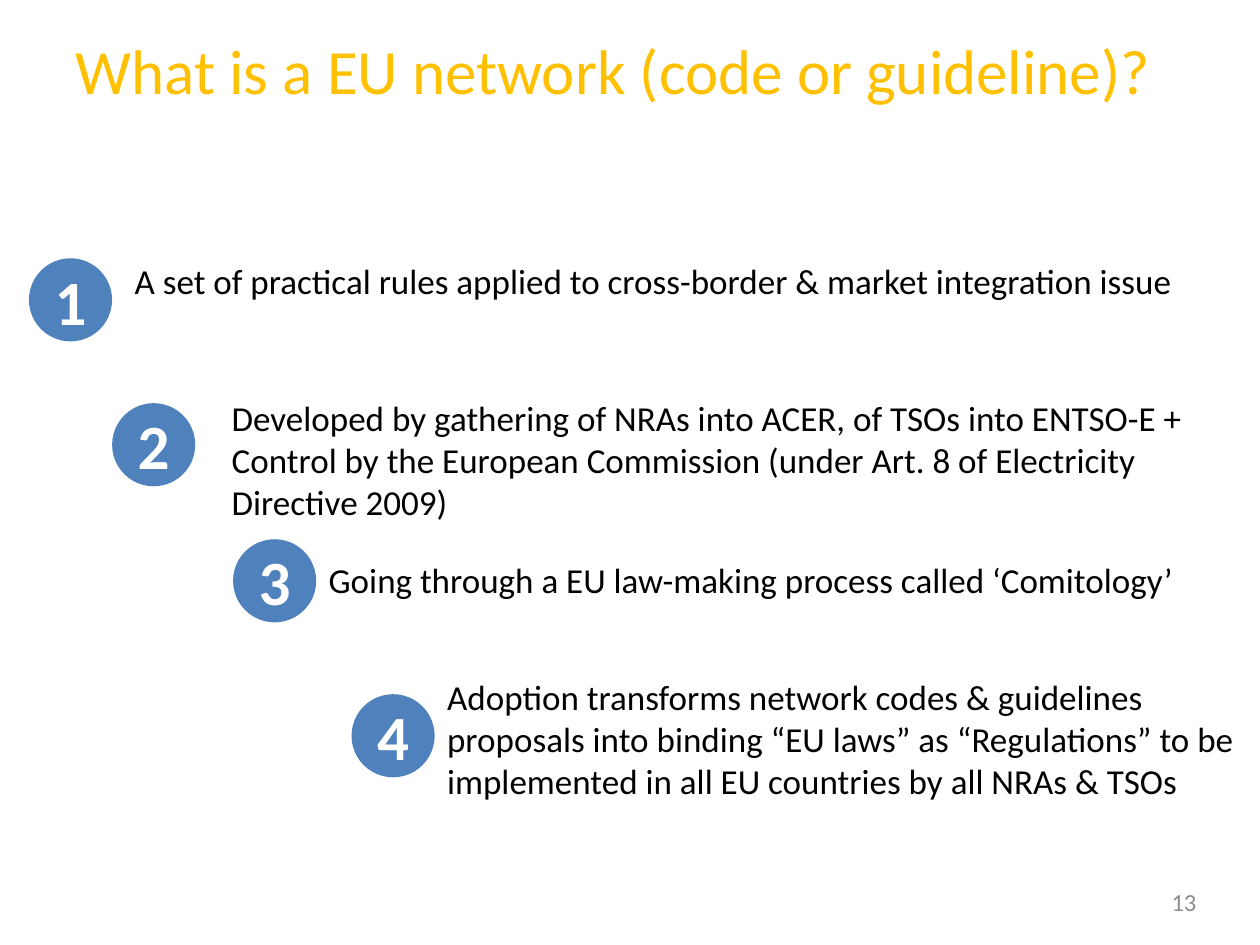
from typing import NamedTuple

from pptx import Presentation
from pptx.dml.color import RGBColor
from pptx.enum import shapes, text
from pptx.util import Inches, Pt

FONT = "Calibri"
GOLD = RGBColor(0xFF, 0xC0, 0x00)
BLUE = RGBColor(0x4F, 0x81, 0xBD)
WHITE = RGBColor(0xFF, 0xFF, 0xFF)
BLACK = RGBColor(0x00, 0x00, 0x00)
GREY = RGBColor(0x8C, 0x8C, 0x8C)
BADGE_SIZE = 0.66


class Box(NamedTuple):
    left: float
    top: float
    width: float
    height: float


class Step(NamedTuple):
    badge_left: float
    badge_top: float
    box: Box
    wording: str


STEPS = [
    Step(0.23, 2.05, Box(0.97, 2.01, 8.95, 0.44),
         "A set of practical rules applied to cross-border & market integration issue"),
    Step(0.89, 3.2, Box(1.74, 3.1, 7.74, 1.11),
         "Developed by gathering of NRAs into ACER, of TSOs into ENTSO-E + Control by "
         "the European Commission (under Art. 8 of Electricity Directive 2009)"),
    Step(1.85, 4.28, Box(2.51, 4.38, 7.49, 0.44),
         "Going through a EU law-making process called ‘Comitology’"),
    Step(2.79, 5.51, Box(3.45, 5.31, 6.55, 1.11),
         "Adoption transforms network codes & guidelines proposals into binding “EU laws” "
         "as “Regulations” to be implemented in all EU countries by all NRAs & TSOs"),
]


def write(sp, wording: str, size: int, color: RGBColor, bold: bool = False):
    """Set the wording and font of a shape; return its paragraph."""
    tf = sp.text_frame
    tf.word_wrap = True
    p = tf.paragraphs[0]
    p.text = wording
    p.font.name = FONT
    p.font.size = Pt(size)
    p.font.bold = bold
    p.font.color.rgb = color
    return p


def add_text(s, box: Box, wording: str, size: int, color: RGBColor):
    sp = s.shapes.add_textbox(*map(Inches, box))
    write(sp, wording, size, color)
    return sp


def add_badge(s, left: float, top: float, number: int) -> None:
    sp = s.shapes.add_shape(shapes.MSO_SHAPE.OVAL, Inches(left), Inches(top),
                            Inches(BADGE_SIZE), Inches(BADGE_SIZE))
    sp.shadow.inherit = False
    sp.fill.solid()
    sp.fill.fore_color.rgb = BLUE
    sp.line.fill.background()
    tf = sp.text_frame
    tf.margin_left = tf.margin_right = tf.margin_top = tf.margin_bottom = 0
    tf.vertical_anchor = text.MSO_ANCHOR.MIDDLE
    write(sp, str(number), 36, WHITE, bold=True).alignment = text.PP_ALIGN.CENTER


def main() -> None:
    prs = Presentation()
    prs.slide_width, prs.slide_height = Inches(10), Inches(7.5)
    # Title Only supplies a real title; its other placeholders are not copied to slides.
    s = prs.slides.add_slide(prs.slide_layouts[6])

    title = add_text(s, Box(0.5, 0.29, 8.99, 1.18),
                     "What is a EU network (code or guideline)?", 36, GOLD)
    title.text_frame.paragraphs[0].line_spacing = Pt(37)

    for number, step in enumerate(STEPS, start=1):
        add_badge(s, step.badge_left, step.badge_top, number)
        add_text(s, step.box, step.wording, 20, BLACK)

    page = add_text(s, Box(9.2, 6.96, 0.63, 0.4), "13", 14, GREY)
    page.text_frame.vertical_anchor = text.MSO_ANCHOR.MIDDLE

    prs.save("out.pptx")


if __name__ == "__main__":
    main()
